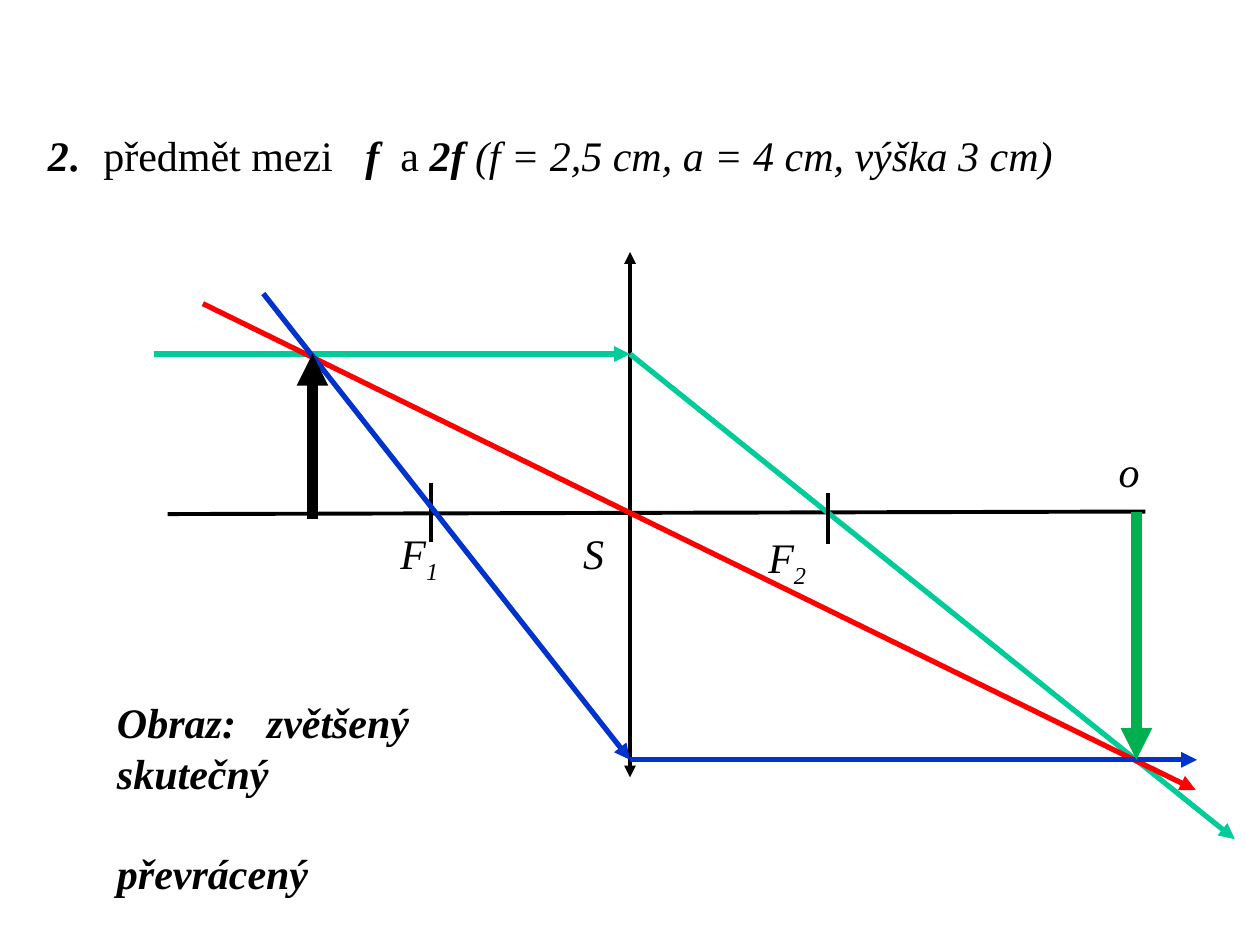
from lxml import etree
from pptx import Presentation
from pptx.dml.color import RGBColor
from pptx.enum import shapes, text
from pptx.oxml import ns
from pptx.util import Inches, Pt

BLACK = RGBColor(0x00, 0x00, 0x00)
TEAL = RGBColor(0x00, 0xCC, 0x99)
RED = RGBColor(0xFF, 0x00, 0x00)
BLUE = RGBColor(0x00, 0x33, 0xCC)
GREEN = RGBColor(0x00, 0xB0, 0x50)
FONT = "Times New Roman"


def add_run(paragraph, wording, bold=False, italic=True, size=24, baseline=None):
    """Append one formatted run to the paragraph."""
    run = paragraph.add_run()
    run.text = wording
    run.font.name, run.font.size = FONT, Pt(size)
    run.font.bold, run.font.italic = bold, italic
    run.font.color.rgb = BLACK
    if baseline is not None:
        run._r.get_or_add_rPr().set("baseline", str(baseline))


def set_tabs(paragraph, *stops):
    """Give the paragraph left tab stops, in inches."""
    tabs = etree.SubElement(paragraph._p.get_or_add_pPr(), ns.qn("a:tabLst"))
    for stop in stops:
        etree.SubElement(tabs, ns.qn("a:tab"), pos=str(Inches(stop)), algn="l")


def add_line(slide, start, end, color=BLACK, width=2.25, head=False, tail=False):
    """Draw a straight line with optional arrowheads."""
    line = slide.shapes.add_connector(
        shapes.MSO_CONNECTOR.STRAIGHT, *map(Inches, (*start, *end)))
    line.line.color.rgb = color
    line.line.width = Pt(width)
    outline = line.line._get_or_add_ln()
    for tag, shown in (("a:headEnd", head), ("a:tailEnd", tail)):
        if shown:
            etree.SubElement(outline, ns.qn(tag), type="triangle")
    etree.SubElement(line._element.spPr, ns.qn("a:effectLst"))


def add_text_box(slide, box):
    """Add a wrapping text box and return its frame."""
    frame = slide.shapes.add_textbox(*map(Inches, box)).text_frame
    frame.word_wrap = True
    return frame


def add_heading(slide, box):
    """Place the case heading in the title placeholder."""
    title = slide.shapes.title
    title.left, title.top, title.width, title.height = map(Inches, box)
    frame = title.text_frame
    frame.auto_size = text.MSO_AUTO_SIZE.NONE
    frame.vertical_anchor = text.MSO_ANCHOR.BOTTOM
    frame.margin_bottom = Inches(0.09)
    heading = frame.paragraphs[0]
    heading.alignment = text.PP_ALIGN.LEFT
    set_tabs(heading, 0.44, 2.52)
    add_run(heading, "2", bold=True)
    add_run(heading, ".", size=32)
    add_run(heading, "\tpředmět mezi\t", italic=False)
    add_run(heading, "f ", bold=True)
    add_run(heading, " a ", italic=False)
    add_run(heading, "2f ", bold=True)
    add_run(heading, "(f = 2,5 cm, a = 4 cm, výška 3 cm)")


def add_ray_diagram(slide, box):
    """Draw the lens, axis, rays, object and image within the box."""
    left, top, width, height = box

    def at(x, y):
        return left + x, top + y

    lens, axis, object_tip, image_tip = 3.78, 2.07, 0.81, 4.03
    object_x, image_x = 1.26, 7.8

    add_line(slide, at(0.11, axis + 0.01), at(7.87, axis - 0.01))
    add_line(slide, at(lens, 0), at(lens, 4.17), head=True, tail=True)

    def add_rays(color, *points):
        for start, end in zip(points, points[1:]):
            add_line(slide, at(*start), at(*end), color, 3, tail=True)

    add_rays(TEAL, (0, object_tip), (lens, object_tip), (8.58, 4.66))
    for focus_x, tick_top, tick_bottom in ((5.35, 1.91, 2.32), (2.2, 1.83, 2.3)):
        add_line(slide, at(focus_x, tick_top), at(focus_x, tick_bottom))
    add_rays(RED, (0.39, 0.41), (8.27, 4.27))
    add_rays(BLUE, (0.87, 0.33), (lens, image_tip), (8.28, image_tip))

    add_line(slide, at(object_x, 2.12), at(object_x, object_tip), width=6, tail=True)
    add_line(slide, at(image_x, 2.06), at(image_x, image_tip), GREEN, 6, tail=True)

    for letter, index, x, y, label_width in (
            ("F", "1", 1.86, 2.14, 0.66), ("F", "2", 4.78, 2.17, 0.63),
            ("S", "", 3.31, 2.14, 0.4), ("o", "", 7.56, 1.49, 0.39)):
        label = add_text_box(slide, (*at(x, y), label_width, 0.5)).paragraphs[0]
        add_run(label, letter)
        if index:
            add_run(label, index, baseline=-25000)


def add_image_properties(slide, box):
    """List the properties of the resulting image."""
    frame = add_text_box(slide, box)
    for number, (wording, gap) in enumerate(
            (("Obraz:\tzvětšený", 0), ("skutečný", 0), ("převrácený", 28.8))):
        line = frame.add_paragraph() if number else frame.paragraphs[0]
        line.line_spacing = Pt(28.8)
        line.space_before = Pt(gap)
        set_tabs(line, 1.19)
        add_run(line, wording, bold=True)


def main():
    """Build and save the slide."""
    deck = Presentation()
    deck.slide_width, deck.slide_height = Inches(10), Inches(7.5)
    slide = deck.slides.add_slide(deck.slide_layouts[5])
    add_heading(slide, (0.28, 0.29, 8.5, 1.25))
    add_ray_diagram(slide, (1.22, 2, 8.58, 4.66))
    add_image_properties(slide, (0.83, 5.48, 3.25, 1.72))
    deck.save("out.pptx")


if __name__ == "__main__":
    main()
